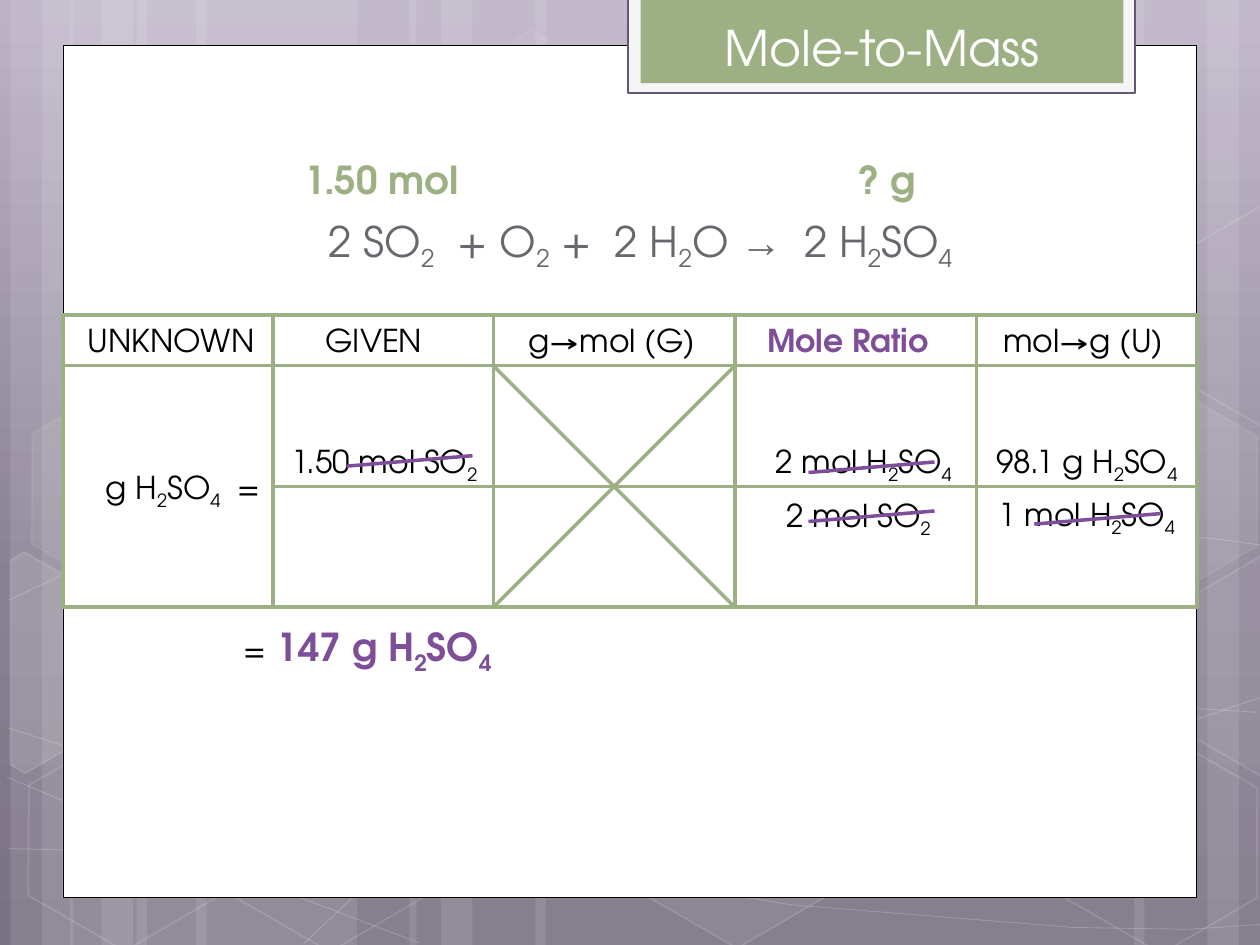
from copy import deepcopy

from lxml.etree import SubElement
from pptx import Presentation
from pptx.dml.color import RGBColor
from pptx.enum.shapes import MSO_CONNECTOR, MSO_SHAPE
from pptx.enum.text import MSO_ANCHOR, MSO_AUTO_SIZE, PP_ALIGN
from pptx.oxml.ns import qn
from pptx.util import Pt

FONT = "TeX Gyre Adventor"
WHITE, BLACK = RGBColor(0xFF, 0xFF, 0xFF), RGBColor(0, 0, 0)
GREEN, PURPLE = RGBColor(0x9C, 0xB0, 0x84), RGBColor(0x7E, 0x4E, 0x99)
GREY, PALE, PLUM = RGBColor(0x69, 0x67, 0x6D), RGBColor(0xF5, 0xF5, 0xF5), RGBColor(0x64, 0x57, 0x73)
BACKDROP = [(0, RGBColor(0xBC, 0xB3, 0xC6)), (0.62, RGBColor(0x89, 0x81, 0x93)),
            (1, RGBColor(0x79, 0x72, 0x82))]

# Content: "_" puts the next character in subscript; runs are (text, format)
TITLE = "Mole-to-Mass"
EQUATION = [("2 SO_2  + O_2 +  2 H_2O ", {}), ("→ ", {"font": "Times New Roman"}), (" 2 H_2SO_4", {})]
HEADINGS = [("\tUNKNOWN\tGIVEN\tg→mol (G)\t", {}),
            ("Mole Ratio\t", {"color": PURPLE, "bold": True}), ("mol→g (U)", {})]
HEADING_TABS = [54.7, 170.6, 306.7, 441.4, 576]
RESULT = [("=", {"size": 18, "color": BLACK, "bold": False}), (" ", {}), ("147 g H_2SO_4", {})]
AMOUNTS = [("? g", 468, 78), ("1.50 mol", 162, 112)]  # text, left, width
CELLS = [  # text, left, top, width
    ("1.50 mol SO_2", 147.6, 249, 144), ("2 mol H_2SO_4", 429, 249, 129),
    ("98.1 g H_2SO_4", 558, 249, 126), ("2 mol SO_2", 429, 280, 123),
    ("1 mol H_2SO_4", 558, 279.4, 126),
]
STRIKES = [(198, 266.4), (462, 270), (462, 298), (591, 299.5)]

# Solution grid
COLUMNS = [36, 156, 282, 420, 558, 684]
GRID_TOP, BODY_TOP, GRID_BOTTOM = 180, 209, 347
BODY_MIDDLE = (BODY_TOP + GRID_BOTTOM) / 2

# Backdrop: stripes (left, width), curves, hexagons (left, top, fill %, line %)
STRIPES = [(78, 126), (6, 36), (24, 60), (112, 126), (40, 36), (58, 60),
           (528, 126), (690, 36), (648, 60), (306, 222), (234, 36), (252, 60)]
CURVES = [
    [(5, 485), (137, 488), (330, 479), (570, 444), (652, 422), (725, 397)],
    [(5, 343), (43, 325), (87, 310), (164, 290), (250, 279), (471, 279), (725, 312)],
    [(4, 444), (122, 494), (240, 539)],
    [(5, 416), (92, 444), (257, 485), (452, 517), (614, 530), (680, 531), (725, 528)],
    [(174, 539), (217, 498), (279, 460), (338, 438), (438, 416), (490, 410), (572, 405),
     (686, 405), (718, 407)],
]
HEXAGONS = [(240.5, 26, 4, 8), (358, 424, 6, 12), (8, 425.5, None, 12),
            (10, 224.6, 7, 8), (125.3, 426, None, 12), (542, 326, 10, 12),
            (600.5, 427, None, 12), (600.5, 226, 7, 8)]
CUT_HEXAGONS = [  # outline, fill %
    ([(6, 320.4), (13.7, 315.4), (69, 347), (68.4, 410.4), (14.4, 442), (6, 437)], 10),
    ([(667, 349), (721, 317.5), (726.5, 321), (726.5, 441.4), (721.4, 444), (667, 412.6)], 4),
    ([(667, 149), (721, 117.4), (727, 121), (726.5, 241), (721.4, 244), (667, 212.4)], None),
]


def style(shape, fill=None, line=None, weight=1, fill_alpha=None, line_alpha=None):
    shape.shadow.inherit = False
    for part, color, alpha in ((shape.fill, fill, fill_alpha), (shape.line.fill, line, line_alpha)):
        if color is None:
            part.background()
            continue
        part.solid()
        part.fore_color.rgb = color
        if alpha:
            SubElement(part._xPr.find(qn("a:solidFill"))[0], qn("a:alpha"), val=str(alpha * 1000))
    if line is not None:
        shape.line.width = Pt(weight)
    return shape


def add_box(slide, left, top, width, height, kind=MSO_SHAPE.RECTANGLE, **look):
    return style(slide.shapes.add_shape(kind, Pt(left), Pt(top), Pt(width), Pt(height)), **look)


def add_outline(slide, points, close, **look):
    start, *rest = [(Pt(x), Pt(y)) for x, y in points]
    builder = slide.shapes.build_freeform(*start, scale=1.0)
    builder.add_line_segments(rest, close=close)
    return style(builder.convert_to_shape(), line=WHITE, **look)


def add_line(slide, x1, y1, x2, y2, color=GREEN):
    line = slide.shapes.add_connector(MSO_CONNECTOR.STRAIGHT, Pt(x1), Pt(y1), Pt(x2), Pt(y2))
    line.line.color.rgb, line.line.width = color, Pt(2)
    SubElement(line._element.spPr, qn("a:effectLst"))
    return line


def write(shape, runs, size=18, color=BLACK, bold=False, font=FONT, align=PP_ALIGN.CENTER):
    frame = shape.text_frame
    frame.word_wrap, frame.auto_size = True, MSO_AUTO_SIZE.SHAPE_TO_FIT_TEXT
    frame.vertical_anchor = MSO_ANCHOR.TOP
    paragraph = frame.paragraphs[0]
    paragraph.alignment = align
    for text, changes in [(runs, {})] if isinstance(runs, str) else runs:
        look = {"size": size, "color": color, "bold": bold, "font": font, **changes}
        first, *others = text.split("_")
        pieces = [(first, False)]
        for part in others:
            pieces += [(part[0], True), (part[1:], False)]
        for piece, subscript in pieces:
            if not piece:
                continue
            run = paragraph.add_run()
            run.text = piece
            run.font.name, run.font.size = look["font"], Pt(look["size"])
            run.font.bold, run.font.color.rgb = look["bold"], look["color"]
            if subscript:
                run._r.get_or_add_rPr().set("baseline", "-25000")
    return paragraph


def add_text(slide, runs, left, top, width, height=29, **look):
    label = slide.shapes.add_textbox(Pt(left), Pt(top), Pt(width), Pt(height))
    write(label, runs, **look)
    return label


def draw_backdrop(slide):
    fill = slide.background.fill
    fill.gradient()
    fill.gradient_angle = 270
    stops = fill._fill._gradFill.find(qn("a:gsLst"))
    stops.append(deepcopy(stops[0]))
    for stop, (position, color) in zip(fill.gradient_stops, BACKDROP):
        stop.position, stop.color.rgb = position, color
    for left, width in STRIPES:
        add_box(slide, left, 0, width, 540, fill=WHITE, fill_alpha=10)
    for curve in CURVES:
        add_outline(slide, curve, False, weight=0.5, line_alpha=20)
    for left, top, tint, edge in HEXAGONS:
        hexagon = add_box(slide, left, top, 126, 109.4, MSO_SHAPE.HEXAGON, line=WHITE,
                          fill=WHITE if tint else None, fill_alpha=tint, line_alpha=edge)
        hexagon.adjustments[0], hexagon.rotation = 0.285, 30
    for points, tint in CUT_HEXAGONS:
        add_outline(slide, points, True, fill=WHITE if tint else None, fill_alpha=tint, line_alpha=12)


def draw_grid(slide):
    left, right = COLUMNS[0], COLUMNS[-1]
    body, header = [add_box(slide, left, top, right - left, bottom - top, line=GREEN, weight=2)
                    for top, bottom in ((BODY_TOP, GRID_BOTTOM), (GRID_TOP, BODY_TOP))]
    headings = write(header, HEADINGS, align=PP_ALIGN.LEFT)
    tabs = SubElement(headings._p.get_or_add_pPr(), qn("a:tabLst"))
    for position in HEADING_TABS:
        SubElement(tabs, qn("a:tab"), pos=str(int(Pt(position))), algn="ctr")
    for x in COLUMNS[1:-1]:
        add_line(slide, x, GRID_TOP, x, GRID_BOTTOM)
    add_line(slide, COLUMNS[1], BODY_MIDDLE, right, BODY_MIDDLE).end_connect(body, 3)
    # Crossed-out step
    add_line(slide, COLUMNS[2], BODY_TOP, COLUMNS[3], GRID_BOTTOM)
    add_line(slide, COLUMNS[3], BODY_TOP, COLUMNS[2], GRID_BOTTOM)


def main():
    deck = Presentation()
    deck.slide_width, deck.slide_height = Pt(720), Pt(540)
    slide = deck.slides.add_slide(deck.slide_layouts[5])
    draw_backdrop(slide)

    # White panel and title tab
    add_box(slide, 36, 26, 648, 487, fill=WHITE, line=BLACK, weight=0.5)
    add_box(slide, 359, -1.5, 289.5, 54.7, fill=PALE, line=PLUM, weight=1.25)
    add_box(slide, 366, -1.5, 276, 49, fill=GREEN)
    title = slide.shapes.title
    title.left, title.top, title.width, title.height = Pt(366), Pt(6.5), Pt(276), Pt(41)
    write(title, TITLE, size=28, color=WHITE)
    slide.shapes._spTree.append(title._element)  # bring in front of the tab

    # Equation with known and wanted amounts
    for amount, left, width in AMOUNTS:
        add_text(slide, amount, left, 85.7, width, 34, size=22, color=GREEN, bold=True)
    add_text(slide, EQUATION, 90, 119.5, 552, 36, size=24, color=GREY)

    # Worked solution
    draw_grid(slide)
    add_text(slide, "g H_2SO_4  =", 36, 264, 120, align=PP_ALIGN.RIGHT)
    for cell in CELLS:
        add_text(slide, *cell)
    for x, y in STRIKES:
        add_line(slide, x, y, x + 72, y - 6, PURPLE)

    # Result
    frame = add_text(slide, RESULT, 132, 349, 192, 41, size=22, color=PURPLE, bold=True,
                     align=PP_ALIGN.LEFT).text_frame
    frame.paragraphs[0].space_before = frame.paragraphs[0].space_after = Pt(12)
    frame.margin_top = frame.margin_bottom = Pt(7.2)
    deck.save("out.pptx")


if __name__ == "__main__":
    main()
